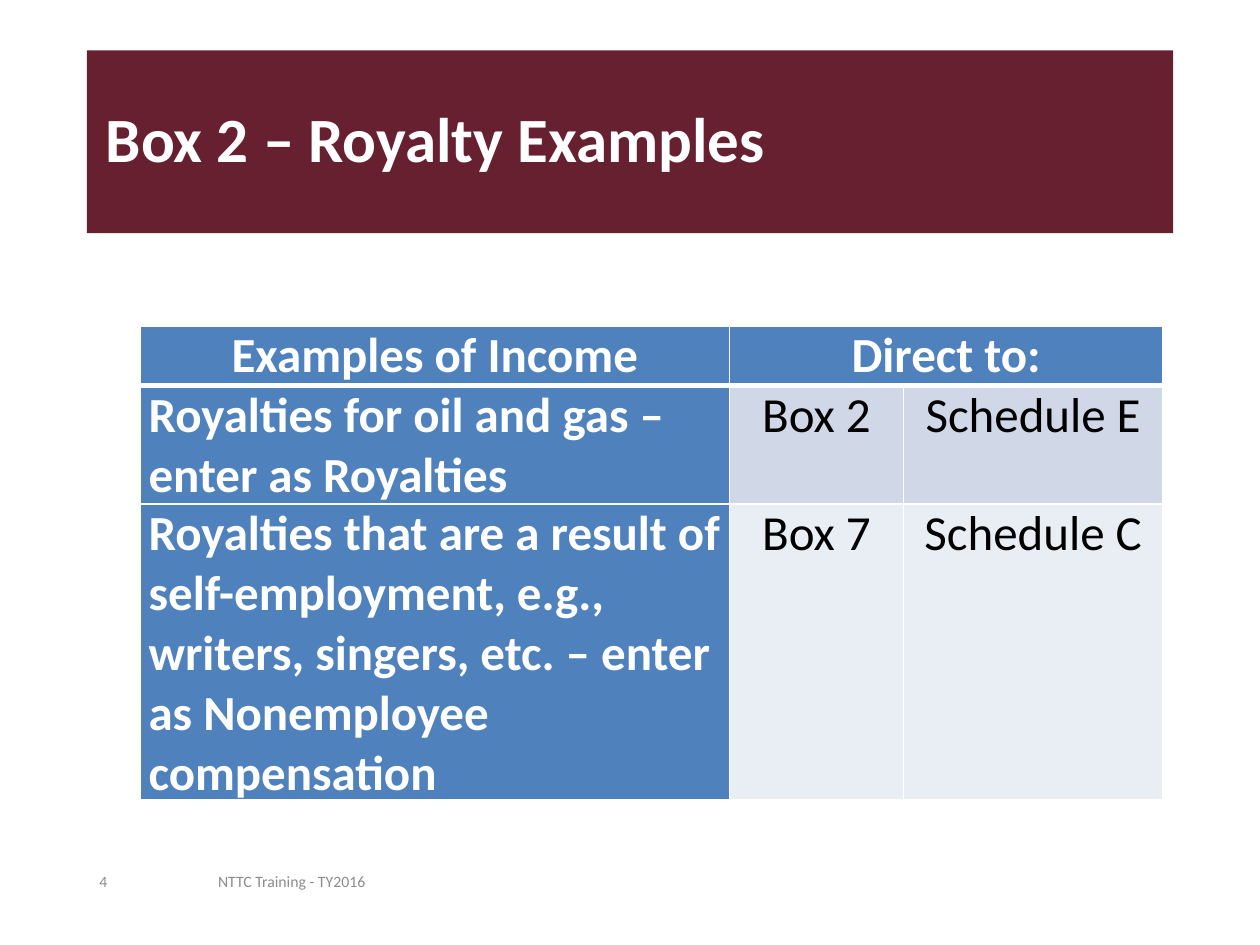
from lxml.etree import SubElement
from pptx import Presentation
from pptx.dml.color import RGBColor
from pptx.enum.shapes import MSO_SHAPE
from pptx.enum.text import MSO_ANCHOR, PP_ALIGN
from pptx.oxml.ns import qn
from pptx.util import Inches, Pt

FONT = "Calibri"
MAROON = RGBColor(0x67, 0x20, 0x2F)
BLUE = RGBColor(0x4F, 0x81, 0xBD)
BAND_DARK = RGBColor(0xD0, 0xD8, 0xE8)
BAND_LIGHT = RGBColor(0xE9, 0xED, 0xF4)
GREY = RGBColor(0x8C, 0x8C, 0x8C)
WHITE = RGBColor(0xFF, 0xFF, 0xFF)
BLACK = RGBColor(0, 0, 0)

MARGIN = 0.69
COLUMN_WIDTHS = (4.68, 1.38, 2.06)
LINE_HEIGHT = 0.47
HEADINGS = ("Examples of Income", "Direct to:")
# Text lines in the row, band colour, cell texts
EXAMPLES = (
    (2, BAND_DARK, ("Royalties for oil and gas – enter as Royalties",
                    "Box 2", "Schedule E")),
    (5, BAND_LIGHT, ("Royalties that are a result of self-employment, e.g., "
                     "writers, singers, etc. – enter as Nonemployee compensation",
                     "Box 7", "Schedule C")),
)


def write(frame, text, size, color, bold=False, align=PP_ALIGN.LEFT):
    frame.text = text
    frame.word_wrap = True
    paragraph = frame.paragraphs[0]
    paragraph.alignment = align
    font = paragraph.runs[0].font
    font.name, font.size, font.bold = FONT, Pt(size), bold
    font.color.rgb = color


def add_title(slide, box, text):
    banner = slide.shapes.add_shape(MSO_SHAPE.RECTANGLE, *map(Inches, box))
    banner.shadow.inherit = False
    banner.fill.solid()
    banner.fill.fore_color.rgb = MAROON
    banner.line.fill.background()
    frame = banner.text_frame
    write(frame, text, 36, WHITE, bold=True)
    frame.margin_left = Inches(0.15)
    frame.vertical_anchor = MSO_ANCHOR.MIDDLE
    frame.paragraphs[0].line_spacing = 0.9


def add_footer(slide, box, number, note):
    left, top, width, height = box
    number_width, note_left = width * 0.15, width * 0.2
    for text, x, text_width in ((number, left, number_width),
                                (note, left + note_left, width - note_left)):
        frame = slide.shapes.add_textbox(
            *map(Inches, (x, top, text_width, height))).text_frame
        write(frame, text, 9, GREY)
        frame.vertical_anchor = MSO_ANCHOR.MIDDLE


def set_borders(cell, bottom):
    properties = cell._tc.get_or_add_tcPr()
    for position, (side, width) in enumerate(
            (("L", 1), ("R", 1), ("T", 1), ("B", bottom))):
        line = SubElement(properties, qn(f"a:ln{side}"), w=str(Pt(width)))
        fill = SubElement(line, qn("a:solidFill"))
        SubElement(fill, qn("a:srgbClr"), val=str(WHITE))
        properties.insert(position, line)


def fill_cell(cell, text, fill, color=WHITE, bold=True,
              align=PP_ALIGN.CENTER, bottom=1):
    if text:
        write(cell.text_frame, text, 28, color, bold, align)
    cell.margin_left = cell.margin_right = Inches(0.07)
    cell.margin_top = cell.margin_bottom = 0
    cell.fill.solid()
    cell.fill.fore_color.rgb = fill
    set_borders(cell, bottom)


def add_examples(slide, left, top):
    line_counts = [1] + [lines for lines, _, _ in EXAMPLES]
    table = slide.shapes.add_table(
        len(line_counts), len(COLUMN_WIDTHS), Inches(left), Inches(top),
        Inches(sum(COLUMN_WIDTHS)),
        Inches(sum(line_counts) * LINE_HEIGHT)).table
    for column, width in zip(table.columns, COLUMN_WIDTHS):
        column.width = Inches(width)
    for row, lines in zip(table.rows, line_counts):
        row.height = Inches(lines * LINE_HEIGHT)

    table.cell(0, 1).merge(table.cell(0, 2))
    for column, heading in enumerate((*HEADINGS, "")):
        fill_cell(table.cell(0, column), heading, BLUE, bottom=3)
    for row, (_, band, (income, *targets)) in enumerate(EXAMPLES, start=1):
        fill_cell(table.cell(row, 0), income, BLUE, align=PP_ALIGN.LEFT)
        for column, target in enumerate(targets, start=1):
            fill_cell(table.cell(row, column), target, band, BLACK, bold=False)


def main():
    deck = Presentation()
    deck.slide_width, deck.slide_height = Inches(10), Inches(7.5)
    slide = deck.slides.add_slide(deck.slide_layouts[6])
    add_title(slide, (MARGIN, 0.4, 10 - 2 * MARGIN, 1.45),
              "Box 2 – Royalty Examples")
    add_footer(slide, (MARGIN, 6.79, 4.71, 0.4), "4", "NTTC Training - TY2016")
    add_examples(slide, 1.11, 2.59)
    deck.save("out.pptx")


if __name__ == "__main__":
    main()
